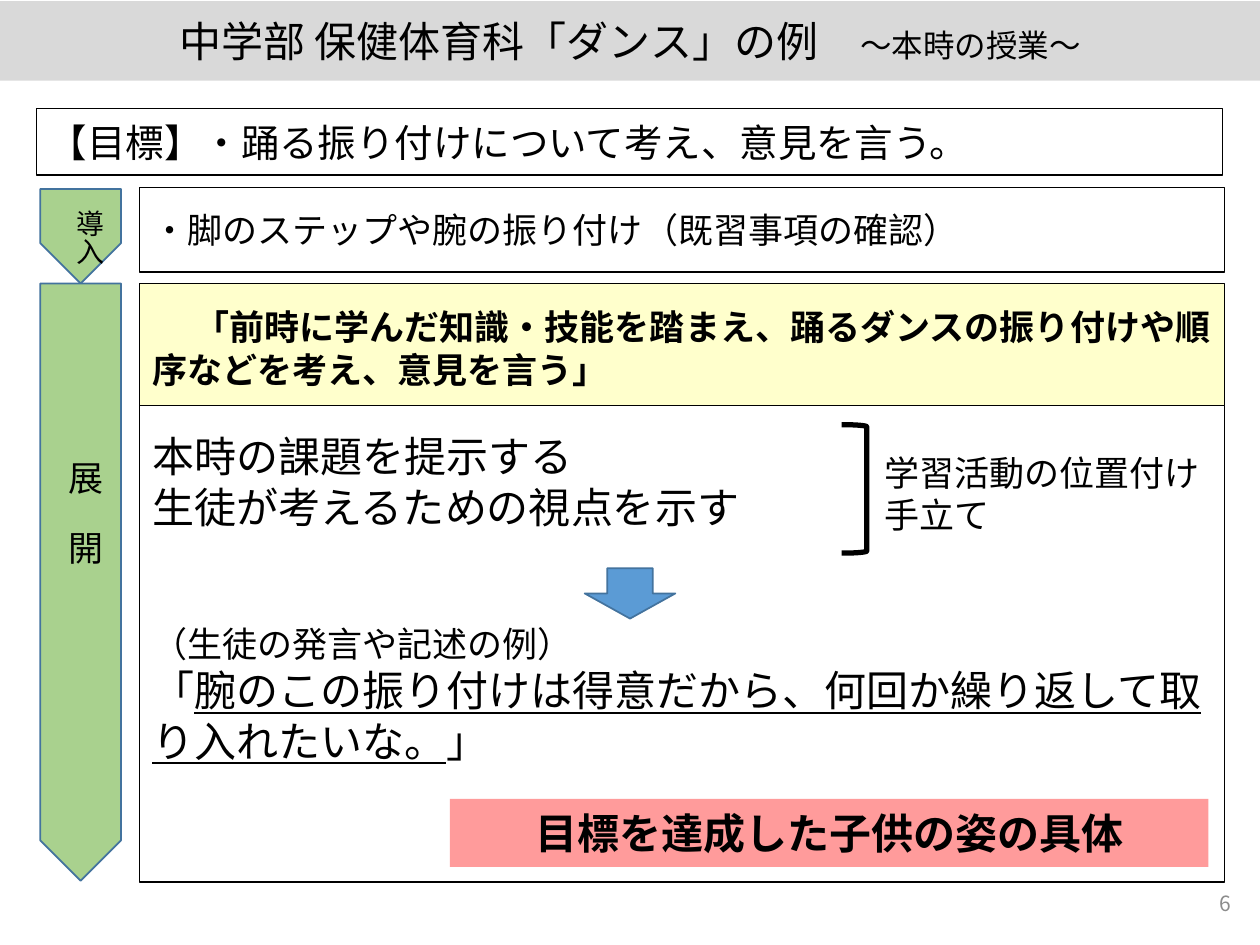
import pptx
import pptx.util
import pptx.dml.color
import pptx.enum.shapes
import pptx.enum.text
import pptx.oxml.ns
import lxml.etree

Inches, Pt = pptx.util.Inches, pptx.util.Pt
RGBColor = pptx.dml.color.RGBColor
MSO_SHAPE = pptx.enum.shapes.MSO_SHAPE
ANCHOR = pptx.enum.text.MSO_ANCHOR
ALIGN = pptx.enum.text.PP_ALIGN

FONT = "Noto Sans CJK JP"
BLACK = RGBColor(0x00, 0x00, 0x00)
GRAY = RGBColor(0xD9, 0xD9, 0xD9)
NUMBER_GRAY = RGBColor(0x8C, 0x8C, 0x8C)
YELLOW = RGBColor(0xFF, 0xFF, 0xCC)
GREEN = RGBColor(0xA9, 0xD1, 0x8E)
BLUE = RGBColor(0x5B, 0x9B, 0xD5)
DARK_BLUE = RGBColor(0x43, 0x73, 0x9E)
PINK = RGBColor(0xFF, 0x9B, 0x9B)


def style_run(r, size, color=BLACK, bold=False, underline=False):
    r.font.size = Pt(size)
    r.font.name = FONT
    r.font.bold = bold
    r.font.underline = underline
    r.font.color.rgb = color
    ea = lxml.etree.SubElement(r._r.get_or_add_rPr(), pptx.oxml.ns.qn("a:ea"))
    ea.set("typeface", FONT)


def add_run(p, text, size, **style):
    r = p.add_run()
    r.text = text
    style_run(r, size, **style)


def write(sp, text, size, align=ALIGN.LEFT, anchor=ANCHOR.MIDDLE, top=0.05, **style):
    """Fill a shape with one paragraph per line, all in one style."""
    tf = sp.text_frame
    tf.word_wrap = True
    tf.vertical_anchor = anchor
    tf.margin_top = Inches(top)
    tf.text = text
    for p in tf.paragraphs:
        p.alignment = align
        for r in p.runs:
            style_run(r, size, **style)
    return tf


def add_shape(s, kind, box, fill=None, line=None, width=0.75):
    sp = s.shapes.add_shape(kind, *(Inches(v) for v in box))
    sp.shadow.inherit = False
    if fill is None:
        sp.fill.background()
    else:
        sp.fill.solid()
        sp.fill.fore_color.rgb = fill
    if line is None:
        sp.line.fill.background()
    else:
        sp.line.color.rgb = line
        sp.line.width = Pt(width)
    return sp


def add_label(s, box, text, size, **style):
    sp = s.shapes.add_textbox(*(Inches(v) for v in box))
    return write(sp, text, size, **style)


def add_title(s, box):
    sp = s.shapes.title
    sp.left, sp.top, sp.width, sp.height = (Inches(v) for v in box)
    sp.fill.solid()
    sp.fill.fore_color.rgb = GRAY
    tf = write(sp, "中学部 保健体育科「ダンス」の例\u3000".replace("\u3000", "　"), 24, align=ALIGN.CENTER)
    add_run(tf.paragraphs[0], "～本時の授業～", 18)


def add_goal(s, box):
    sp = add_shape(s, MSO_SHAPE.RECTANGLE, box, line=BLACK)
    write(sp, "【目標】・踊る振り付けについて考え、意見を言う。", 22)


def add_stage(s, box, text, size, label_box):
    """Downward pentagon filling the box, with a vertical label."""
    left, top, width, height = box
    # The preset points right, so its sides are swapped before the turn
    turned = (left + (width - height) / 2, top + (height - width) / 2, height, width)
    sp = add_shape(s, MSO_SHAPE.PENTAGON, turned, GREEN, DARK_BLUE, 1)
    sp.rotation = 90
    tf = add_label(s, label_box, text, size, anchor=ANCHOR.TOP)
    tf._txBody.bodyPr.set("vert", "eaVert")


def add_introduction(s, box):
    sp = add_shape(s, MSO_SHAPE.RECTANGLE, box, line=BLACK)
    write(sp, "・脚のステップや腕の振り付け（既習事項の確認）", 20)


def add_development(s, box):
    left, top, width, height = box
    head = 0.97

    # Activities and an example of what students say
    sp = add_shape(s, MSO_SHAPE.RECTANGLE, (left, top + head, width, height - head), line=BLACK)
    tf = write(sp, "本時の課題を提示する\n生徒が考えるための視点を示す", 24,
               anchor=ANCHOR.TOP, top=0.2)
    p = tf.add_paragraph()
    p.alignment = ALIGN.LEFT
    p.space_before = Pt(52)
    add_run(p, "（生徒の発言や記述の例）", 20)
    p = tf.add_paragraph()
    p.alignment = ALIGN.LEFT
    add_run(p, "「", 24)
    add_run(p, "腕のこの振り付けは得意だから、何回か繰り返して取り入れたいな。", 24, underline=True)
    add_run(p, "」", 24)

    # Task of the lesson
    sp = add_shape(s, MSO_SHAPE.RECTANGLE, (left, top, width, head), YELLOW, BLACK)
    tf = write(sp, "　", 24, bold=True)
    add_run(tf.paragraphs[0],
            "「前時に学んだ知識・技能を踏まえ、踊るダンスの振り付けや順序などを考え、意見を言う」",
            20, bold=True)

    # Arrow, bracket with its note, and the outcome
    add_shape(s, MSO_SHAPE.DOWN_ARROW, (left + 3.53, top + 2.26, 0.72, 0.4), BLUE, DARK_BLUE, 1)
    add_shape(s, MSO_SHAPE.RIGHT_BRACKET, (left + 5.57, top + 1.12, 0.2, 1.02), line=BLACK, width=3)
    add_label(s, (left + 5.81, top + 1.3, 2.81, 0.67), "学習活動の位置付け\n手立て", 20, top=0.12)
    sp = add_shape(s, MSO_SHAPE.RECTANGLE, (left + 2.46, top + 4.09, 6.02, 0.54), PINK)
    write(sp, "目標を達成した子供の姿の具体", 24, align=ALIGN.CENTER, bold=True)


def main():
    prs = pptx.Presentation()
    prs.slide_width, prs.slide_height = Inches(10), Inches(7.5)
    s = prs.slides.add_slide(prs.slide_layouts[5])

    add_title(s, (0, 0.01, 10, 0.63))
    add_goal(s, (0.29, 0.86, 9.41, 0.53))
    add_introduction(s, (1.11, 1.49, 8.61, 0.67))
    add_development(s, (1.11, 2.25, 8.61, 4.75))
    add_stage(s, (0.32, 1.5, 0.64, 0.75), "導入", 16, (0.42, 1.57, 0.47, 0.8))
    add_stage(s, (0.32, 2.25, 0.64, 4.74), "展　開", 20, (0.35, 3.56, 0.54, 1.89))

    # Page number
    add_label(s, (7.62, 6.97, 2.25, 0.4), "6", 12, align=ALIGN.RIGHT, color=NUMBER_GRAY)
    prs.save("out.pptx")


if __name__ == "__main__":
    main()
